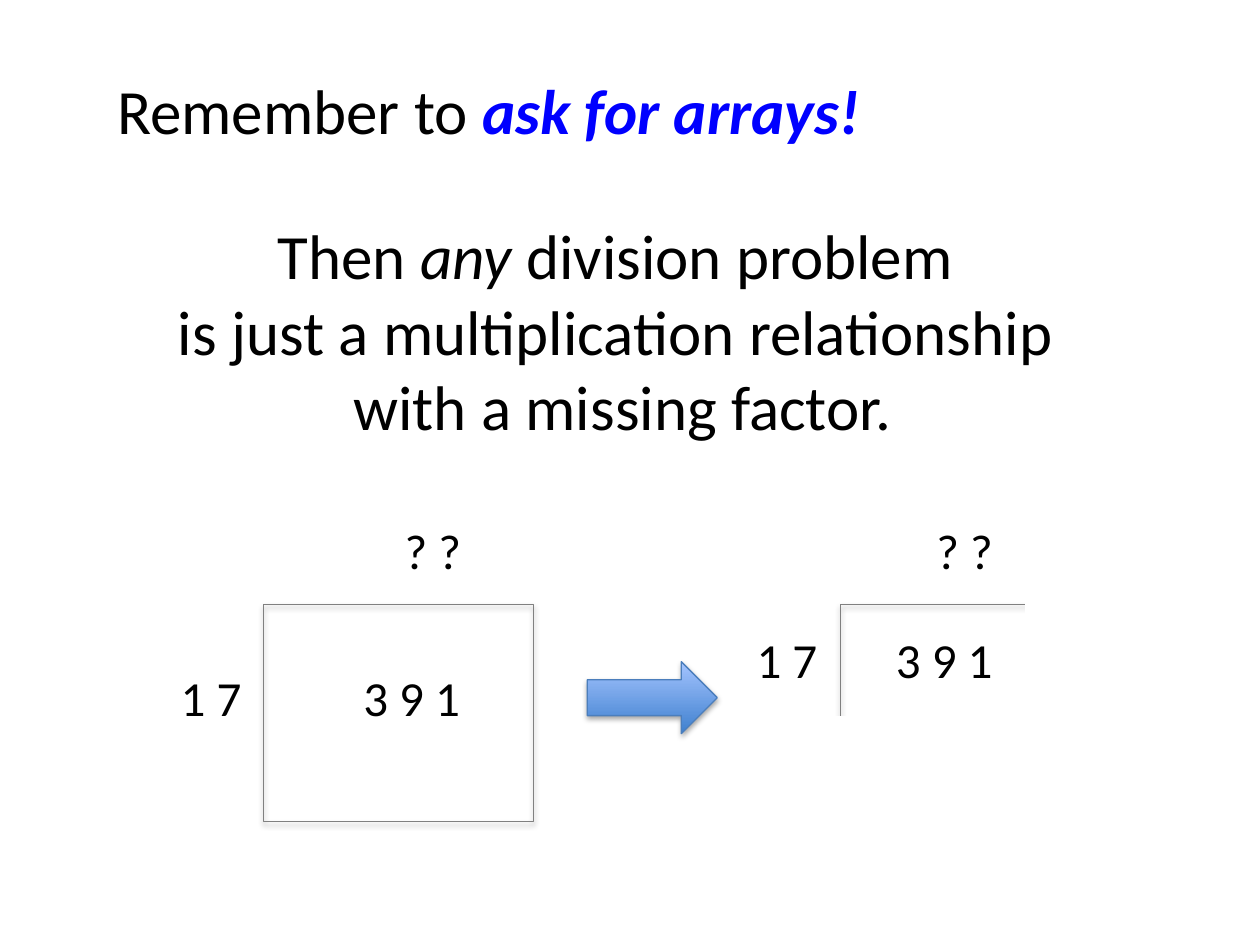
from dataclasses import dataclass

import pptx
import pptx.dml.color
import pptx.enum.shapes
import pptx.enum.text
import pptx.oxml
import pptx.oxml.ns
import pptx.util

Cm = pptx.util.Cm
Pt = pptx.util.Pt
Shapes = pptx.enum.shapes.MSO_SHAPE
Align = pptx.enum.text.PP_ALIGN


@dataclass(frozen=True)
class Theme:
    font: str = "Calibri"
    heading_size: int = 36
    number_size: int = 28
    text: str = "000000"
    emphasis: str = "0000FF"
    paper: str = "FFFFFF"
    outline: str = "808080"
    arrow_line: str = "4B7EBC"
    arrow_bottom: str = "3F80CE"
    arrow_top: str = "A4C4FF"
    line_width: float = 0.75


THEME = Theme()
NUMBER_HEIGHT = 1.45
FACTOR_WIDTH = 2.11
ARRAY_TOP = 12.19
QUOTIENT_TOP = 10.36


def rgb(value):
    return pptx.dml.color.RGBColor.from_string(value)


def lengths(*values):
    return [Cm(value) for value in values]


def add_run(paragraph, text, size, color=THEME.text, bold=False, italic=False):
    run = paragraph.add_run()
    run.text = text
    font = run.font
    font.name, font.size = THEME.font, Pt(size)
    font.bold, font.italic = bold, italic
    font.color.rgb = rgb(color)


def prepare_text(holder, align):
    """Set up the frame and return its first paragraph."""
    frame = holder.text_frame
    frame.word_wrap = True
    frame.auto_size = pptx.enum.text.MSO_AUTO_SIZE.SHAPE_TO_FIT_TEXT
    frame.vertical_anchor = pptx.enum.text.MSO_ANCHOR.TOP
    frame.paragraphs[0].alignment = align
    return frame.paragraphs[0]


def add_number(shapes, text, left, top, width=FACTOR_WIDTH):
    box = shapes.add_textbox(*lengths(left, top, width, NUMBER_HEIGHT))
    add_run(prepare_text(box, Align.CENTER), text, THEME.number_size)


def add_outlined(shapes, kind, box, line):
    shape = shapes.add_shape(kind, *lengths(*box))
    shape.shadow.inherit = False
    shape.line.color.rgb = rgb(line)
    shape.line.width = Pt(THEME.line_width)
    return shape


def add_soft_shadow(shape):
    effects = shape._element.spPr.find(pptx.oxml.ns.qn("a:effectLst"))
    effects.append(pptx.oxml.parse_xml(
        f'<a:outerShdw {pptx.oxml.ns.nsdecls("a")} blurRad="40000" dist="23000" '
        'dir="5400000" rotWithShape="0"><a:srgbClr val="000000">'
        '<a:alpha val="35000"/></a:srgbClr></a:outerShdw>'))


def add_array(shapes, left):
    array = add_outlined(shapes, Shapes.RECTANGLE,
                         (left, ARRAY_TOP, 5.44, 4.37), THEME.outline)
    array.fill.background()
    add_soft_shadow(array)


def add_cover(shapes, *box):
    """Hide part of an array so that only the division bracket remains."""
    cover = add_outlined(shapes, Shapes.RECTANGLE, box, THEME.paper)
    cover.fill.solid()
    cover.fill.fore_color.rgb = rgb(THEME.paper)


def add_arrow(shapes):
    arrow = add_outlined(shapes, Shapes.RIGHT_ARROW,
                         (11.84, 13.34, 2.62, NUMBER_HEIGHT), THEME.arrow_line)
    arrow.fill.gradient()
    arrow.fill.gradient_angle = 90
    colors = (THEME.arrow_bottom, THEME.arrow_top)
    for stop, color in zip(arrow.fill.gradient_stops, colors):
        stop.color.rgb = rgb(color)
    add_soft_shadow(arrow)


def add_heading(slide):
    title = slide.shapes.title
    title.left, title.top, title.width, title.height = lengths(2.11, 1.32, 20.88, 1.8)
    paragraph = prepare_text(title, Align.LEFT)
    add_run(paragraph, "Remember to ", THEME.heading_size)
    add_run(paragraph, "ask for arrays!", THEME.heading_size,
            THEME.emphasis, bold=True, italic=True)


def add_statement(shapes):
    box = shapes.add_textbox(*lengths(2.11, 4.24, 20.88, 4.88))
    paragraph = prepare_text(box, Align.CENTER)
    add_run(paragraph, "Then ", THEME.heading_size)
    add_run(paragraph, "any", THEME.heading_size, italic=True)
    add_run(paragraph, " division problem ", THEME.heading_size)
    for line in ("is just a multiplication relationship ", "with a missing factor."):
        paragraph.add_line_break()
        add_run(paragraph, line, THEME.heading_size)


def add_area_model(slide):
    shapes = slide.shapes.add_group_shape().shapes
    add_array(shapes, 5.31)
    add_number(shapes, "1 7", 3.2, 13.34)
    add_number(shapes, "3 9 1", 6.93, 13.34, 2.74)
    add_number(shapes, "? ?", 7.67, QUOTIENT_TOP)


def add_long_division(slide):
    shapes = slide.shapes.add_group_shape().shapes
    add_array(shapes, 16.94)
    add_number(shapes, "1 7", 14.81, 12.57)
    add_number(shapes, "3 9 1", 17.42, 12.57, 3.23)
    add_number(shapes, "? ?", 18.39, QUOTIENT_TOP)
    add_cover(shapes, 15.98, 14.45, 7.85, 2.87)
    add_cover(shapes, 20.68, 9.83, 3.33, 7.85)


def main():
    deck = pptx.Presentation()
    deck.slide_width, deck.slide_height = lengths(25.4, 19.05)
    slide = deck.slides.add_slide(deck.slide_layouts.get_by_name("Title Only"))
    add_heading(slide)
    add_statement(slide.shapes)
    add_area_model(slide)
    add_arrow(slide.shapes)
    add_long_division(slide)
    deck.save("out.pptx")


if __name__ == "__main__":
    main()
